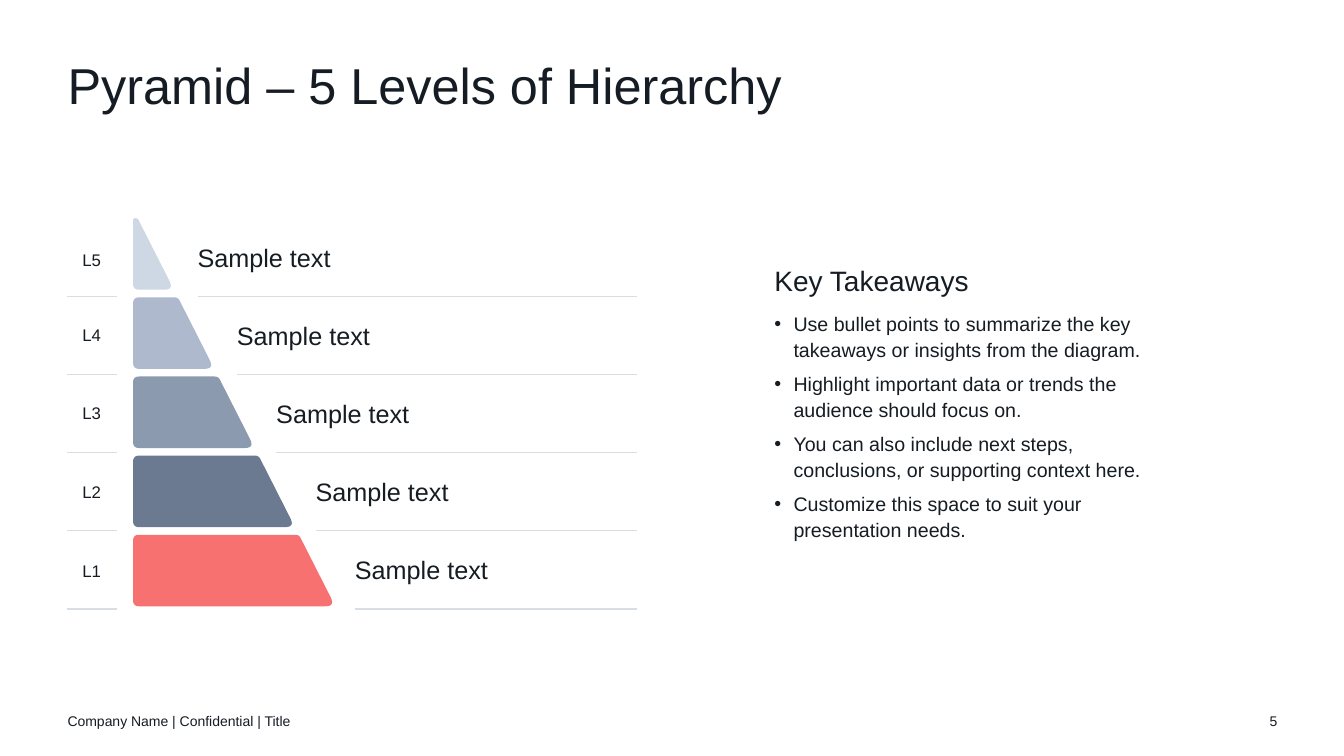
import math
from dataclasses import dataclass

from lxml import etree
from pptx import Presentation
from pptx.dml.color import RGBColor
from pptx.enum.shapes import MSO_CONNECTOR
from pptx.enum.text import MSO_ANCHOR, MSO_AUTO_SIZE, PP_ALIGN
from pptx.oxml.ns import qn
from pptx.util import Inches, Pt

STRAIGHT = MSO_CONNECTOR.STRAIGHT
TOP, MIDDLE = MSO_ANCHOR.TOP, MSO_ANCHOR.MIDDLE
LEFT, CENTER, RIGHT = PP_ALIGN.LEFT, PP_ALIGN.CENTER, PP_ALIGN.RIGHT


@dataclass(frozen=True)
class Theme:
    font: str = "Arial"
    ink: str = "151C23"
    rule: str = "D9DEE5"
    levels: tuple = ("CED8E4", "AFB9CD", "8C9AB0", "6B7A90", "F87171")
    title: int = 36
    heading: int = 20
    sample: int = 18
    body: int = 14
    label: int = 12
    footer: int = 10


theme = Theme()


def write(sp, box, lines, anchor=MIDDLE, align=LEFT):
    """Place a shape and fill it with (text, size) paragraphs."""
    sp.left, sp.top, sp.width, sp.height = [Inches(v) for v in box]
    tf = sp.text_frame
    tf.word_wrap = True
    tf.auto_size = MSO_AUTO_SIZE.NONE
    tf.vertical_anchor = anchor
    tf.margin_left = tf.margin_right = tf.margin_top = tf.margin_bottom = 0
    for i, (text, size) in enumerate(lines):
        p = tf.add_paragraph() if i else tf.paragraphs[0]
        p.alignment = align
        r = p.add_run()
        r.text = text
        r.font.name = theme.font
        r.font.size = Pt(size)
        r.font.color.rgb = RGBColor.from_string(theme.ink)
    return tf.paragraphs


def round_corners(corners, radius, steps=6):
    """Return the outline of a polygon with each corner rounded."""
    outline = []
    for i, c in enumerate(corners):
        a, b = corners[i - 1], corners[(i + 1) % len(corners)]
        da, db = math.dist(a, c), math.dist(b, c)
        cos = sum((a[k] - c[k]) * (b[k] - c[k]) for k in (0, 1)) / (da * db)
        cut = min(radius / math.tan(math.acos(cos) / 2), da / 2, db / 2)
        start = [c[k] + (a[k] - c[k]) * cut / da for k in (0, 1)]
        end = [c[k] + (b[k] - c[k]) * cut / db for k in (0, 1)]
        for t in (n / steps for n in range(steps + 1)):
            outline.append(tuple(
                Inches((1 - t) ** 2 * start[k] + 2 * t * (1 - t) * c[k] + t * t * end[k])
                for k in (0, 1)))
    return outline


prs = Presentation()
prs.slide_width, prs.slide_height = Inches(13.33), Inches(7.5)
slide = prs.slides.add_slide(prs.slide_layouts[1])
shapes = slide.shapes

# Title
title = write(shapes.title, (0.67, 0.6, 12, 0.6),
              [("Pyramid – 5 Levels of Hierarchy", theme.title)], TOP)
title[0].line_spacing = 0.9

# Key takeaways
takeaways = [
    "Use bullet points to summarize the key takeaways or insights from the diagram.",
    "Highlight important data or trends the audience should focus on.",
    "You can also include next steps, conclusions, or supporting context here.",
    "Customize this space to suit your presentation needs.",
]
paragraphs = write(slide.placeholders[1], (7.68, 1.8, 3.99, 4.35),
                   [("Key Takeaways", theme.heading)]
                   + [(text, theme.body) for text in takeaways])
for i, p in enumerate(paragraphs):
    p.line_spacing = 1.1
    p.space_before = Pt(6)
    p.space_after = Pt(0 if i else 3)
    pPr = p._p.get_or_add_pPr()
    indent = Inches(0.19) if i else 0
    pPr.set("marL", str(indent))
    pPr.set("indent", str(-indent))
    if i:
        etree.SubElement(pPr, qn("a:buFont")).set("typeface", theme.font)
        etree.SubElement(pPr, qn("a:buChar")).set("char", "•")
    else:
        etree.SubElement(pPr, qn("a:buNone"))

# Pyramid levels, from the top down
label_tops = (2.43, 3.17, 3.95, 4.73, 5.51)
for i, color in enumerate(theme.levels):
    # Block with a slanted right side
    top, step = 2.165 + 0.785 * i, 0.4 * i
    bottom = top + 0.71
    outline = round_corners([(1.32, top), (1.365 + step, top),
                             (1.725 + step, bottom), (1.32, bottom)], 0.06)
    builder = shapes.build_freeform(*outline[0], scale=1.0)
    builder.add_line_segments(outline[1:], close=True)
    block = builder.convert_to_shape()
    block.shadow.inherit = False
    block.fill.solid()
    block.fill.fore_color.rgb = RGBColor.from_string(color)
    block.line.fill.background()

    # Rules on both sides of the block
    text_left, rule_y = 1.96 + 0.39 * i, 2.94 + 0.775 * i
    for x1, x2 in ((0.66, 1.16), (text_left, 6.32)):
        rule = shapes.add_connector(STRAIGHT, Inches(x1), Inches(rule_y),
                                    Inches(x2), Inches(rule_y))
        rule.line.color.rgb = RGBColor.from_string(theme.rule)
        rule.line.width = Pt(1)
        etree.SubElement(rule._element.spPr, qn("a:effectLst"))

    # Level label and description
    write(shapes.add_textbox(0, 0, 0, 0), (0.71, label_tops[i], 0.4, 0.3),
          [(f"L{5 - i}", theme.label)], align=CENTER)
    write(shapes.add_textbox(0, 0, 0, 0), (text_left, rule_y - 0.54, 2.8, 0.3),
          [("Sample text", theme.sample)])

# Footer
write(shapes.add_textbox(0, 0, 0, 0), (0.67, 6.95, 4.5, 0.4),
      [("Company Name | Confidential | Title", theme.footer)])
write(shapes.add_textbox(0, 0, 0, 0), (12.17, 6.95, 0.5, 0.4),
      [("5", theme.footer)], align=RIGHT)

prs.save("out.pptx")
